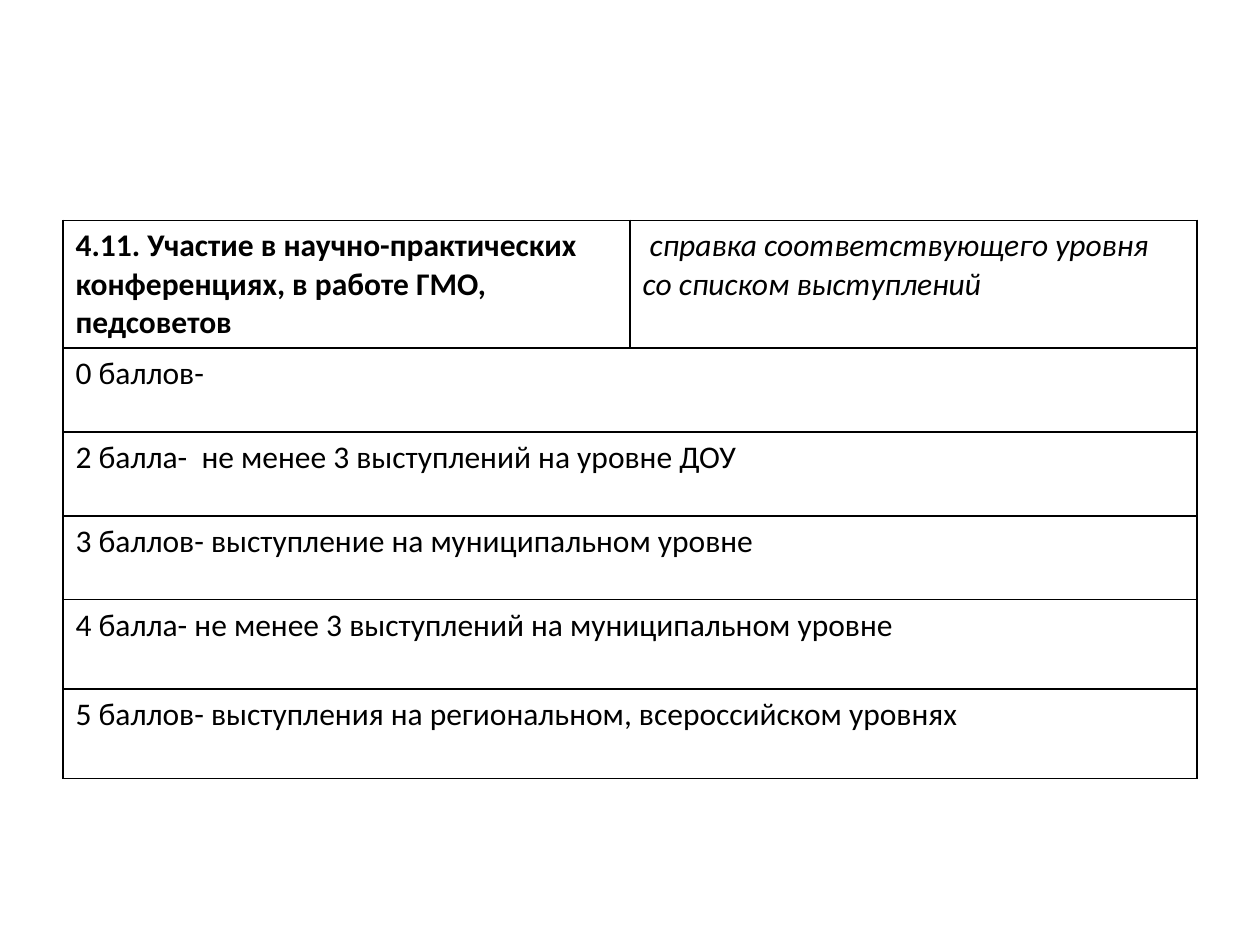
from lxml.etree import SubElement
from pptx import Presentation
from pptx.dml.color import RGBColor
from pptx.oxml.ns import qn
from pptx.util import Cm, Pt

BLACK = RGBColor(0, 0, 0)
FONT = {"name": "Calibri", "size": Pt(18), "bold": False, "italic": False}

HEAD = [
    ("4.11. Участие в научно-практических конференциях, в работе ГМО, педсоветов",
     {"bold": True}),
    (" справка соответствующего уровня со списком выступлений",
     {"italic": True}),
]
SCORES = [
    "0 баллов-",
    "2 балла-  не менее 3 выступлений на уровне ДОУ",
    "3 баллов- выступление на муниципальном уровне",
    "4 балла- не менее 3 выступлений на муниципальном уровне",
    "5 баллов- выступления на региональном, всероссийском уровнях",
]
WIDTH, LEFT, TOP = 22.86, 1.27, 4.44
ROWS = [2.58] + [1.69] * 3 + [1.8] * 2


def write(cell, text, **style):
    run = cell.text_frame.paragraphs[0].add_run()
    run.text = text
    for key, value in {**FONT, **style}.items():
        setattr(run.font, key, value)
    run.font.color.rgb = BLACK


def frame(cell):
    """Clear the fill and draw a thin line on all four sides."""
    cell.fill.background()
    props = cell._tc.get_or_add_tcPr()
    for place, side in enumerate(("lnL", "lnR", "lnT", "lnB")):
        line = SubElement(props, qn(f"a:{side}"), w=str(Pt(1)))
        fill = SubElement(line, qn("a:solidFill"))
        SubElement(fill, qn("a:srgbClr"), val=str(BLACK))
        props.insert(place, line)


def add_grid(slide):
    shape = slide.shapes.add_table(len(ROWS), len(HEAD), Cm(LEFT), Cm(TOP),
                                   Cm(WIDTH), Cm(sum(ROWS)))
    table = shape.table
    table.first_row = table.horz_banding = False
    for row, height in zip(table.rows, ROWS):
        row.height = Cm(height)
    for cell in table.iter_cells():
        frame(cell)
    return table


def main():
    deck = Presentation()
    deck.slide_width, deck.slide_height = Cm(25.4), Cm(19.05)
    slide = deck.slides.add_slide(deck.slide_layouts[6])
    table = add_grid(slide)

    # Heading row: criterion and proof
    for col, (text, style) in enumerate(HEAD):
        write(table.cell(0, col), text, **style)

    # Score rows across both columns
    for row, text in enumerate(SCORES, 1):
        cell = table.cell(row, 0)
        cell.merge(table.cell(row, 1))
        write(cell, text)

    deck.save("out.pptx")


if __name__ == "__main__":
    main()
